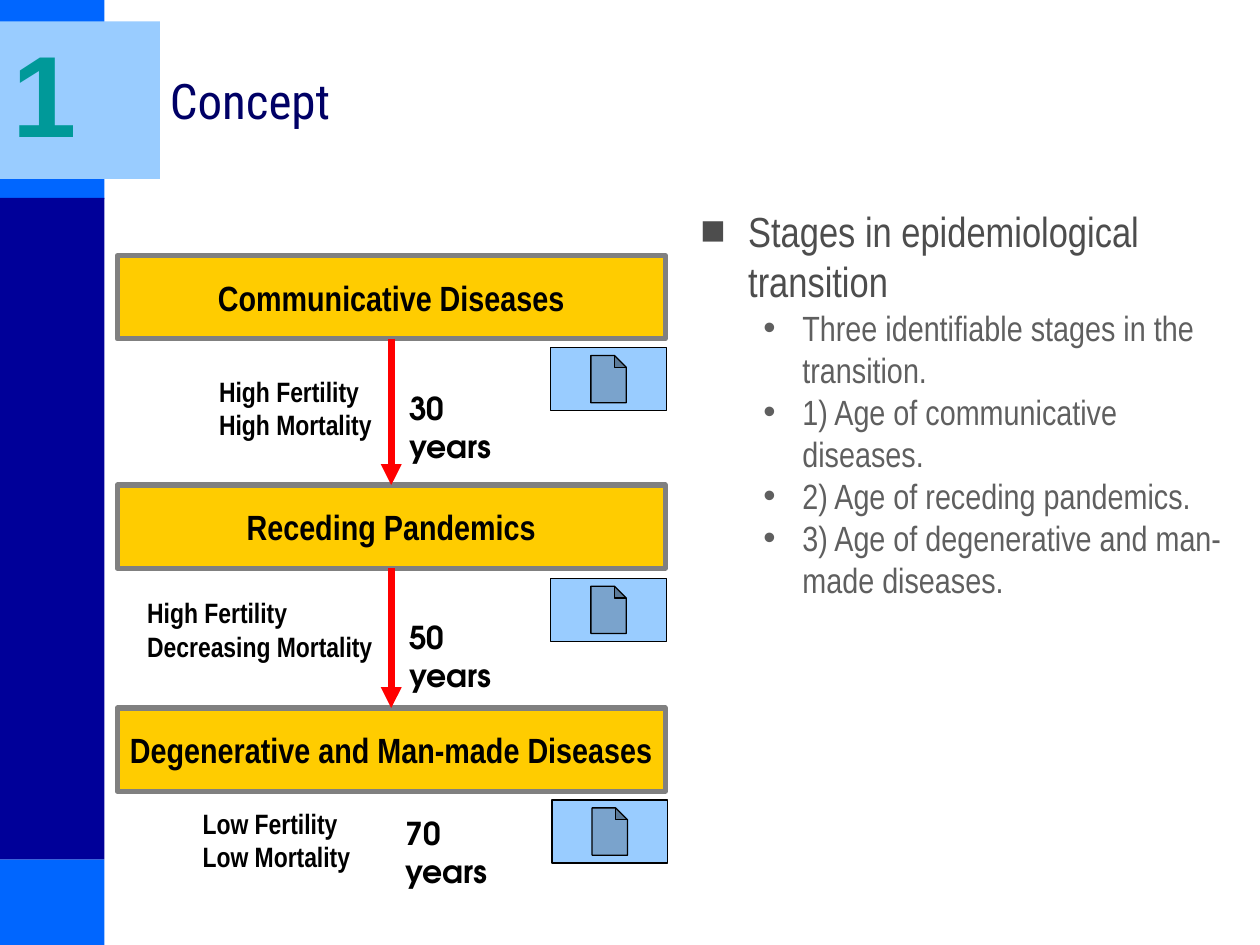
from lxml import etree
from pptx import Presentation, util as u
from pptx.dml.color import RGBColor
from pptx.enum import shapes, text
from pptx.oxml import ns

COLORS = {
    "blue": "0066FF", "navy": "000099", "sky": "99CCFF", "title": "000066",
    "heading": "4D4D4D", "detail": "5F5F5F", "gold": "FFCC00", "gray": "808080",
    "black": "000000", "red": "FF0000", "teal": "009999",
}
NARROW = "Arial Narrow"


def color(name):
    return RGBColor.from_string(COLORS[name])


def add_child(parent, tag, **attributes):
    return etree.SubElement(parent, ns.qn(tag), attributes)


class SlideBuilder:
    """Holds the current slide and the style shared by its elements."""

    def __init__(self, slide):
        self.slide = slide

    def format_run(self, paragraph, size, font, ink, bold=False):
        for run in paragraph.runs:
            run.font.size = u.Pt(size)
            run.font.bold = bold
            run.font.color.rgb = color(ink)
            run.font.name = font

    def shape(self, kind, box, fill, line=None, width=0.75):
        shape = self.slide.shapes.add_shape(kind, *map(u.Inches, box))
        shape.shadow.inherit = False
        shape.fill.solid()
        shape.fill.fore_color.rgb = color(fill)
        if line:
            shape.line.color.rgb = color(line)
            shape.line.width = u.Pt(width)
        else:
            shape.line.fill.background()
        return shape

    def stage(self, top, label):
        shape = self.shape(shapes.MSO_SHAPE.RECTANGLE, (0.93, top, 4.35, 0.66),
                           "gold", "gray", 3)
        frame = shape.text_frame
        frame.word_wrap = False
        frame.vertical_anchor = text.MSO_ANCHOR.MIDDLE
        frame.text = label
        frame.paragraphs[0].alignment = text.PP_ALIGN.CENTER
        self.format_run(frame.paragraphs[0], 20, NARROW, "black", True)
        return shape

    def text(self, box, lines, size, font, ink, bold=False, wrap=True, middle=False):
        frame = self.slide.shapes.add_textbox(*map(u.Inches, box)).text_frame
        frame.word_wrap = wrap
        if middle:
            frame.vertical_anchor = text.MSO_ANCHOR.MIDDLE
        frame.text = "\n".join(lines)
        for paragraph in frame.paragraphs:
            self.format_run(paragraph, size, font, ink, bold)
        return frame

    def bullet(self, paragraph, mark, margin, hanging):
        properties = paragraph._p.get_or_add_pPr()
        properties.set("marL", str(u.Inches(margin)))
        properties.set("indent", str(-u.Inches(hanging)))
        add_child(properties, "a:buFont", typeface="Arial")
        add_child(properties, "a:buChar", char=mark)

    def text_shadow(self, run):
        effects = etree.Element(ns.qn("a:effectLst"))
        shadow = add_child(effects, "a:outerShdw", dist="38100", dir="2700000")
        add_child(shadow, "a:srgbClr", val=COLORS["gray"])
        run.font._element.find(ns.qn("a:solidFill")).addnext(effects)

    def arrow(self, start, end):
        """Joins the bottom of one stage to the top of the next."""
        connector = self.slide.shapes.add_connector(shapes.MSO_CONNECTOR.STRAIGHT, 0, 0, 0, 0)
        connector.begin_connect(start, 2)
        connector.end_connect(end, 0)
        connector.line.color.rgb = color("red")
        connector.line.width = u.Pt(4)
        add_child(connector.line._get_or_add_ln(), "a:tailEnd", type="triangle")
        add_child(connector._element.spPr, "a:effectLst")


def main():
    presentation = Presentation()
    presentation.slide_width = u.Inches(10)
    presentation.slide_height = u.Inches(7.5)
    slide = presentation.slides.add_slide(presentation.slide_layouts[6])
    builder = SlideBuilder(slide)

    bands = [
        ((0, 6.82, 0.83, 0.68), "blue"), ((0, 0, 0.83, 1.58), "blue"),
        ((0, 1.57, 0.83, 5.25), "navy"), ((0, 0.17, 1.27, 1.25), "sky"),
    ]
    for box, fill in bands:
        builder.shape(shapes.MSO_SHAPE.RECTANGLE, box, fill)

    builder.text((1.25, 0.17, 8.58, 1.25), ["Concept"], 28, "Roboto Condensed",
                 "title", middle=True)
    number = builder.text((0, 0.12, 0.92, 1.21), ["1"], 66, "Arial", "teal",
                          bold=True, middle=True)
    builder.text_shadow(number.paragraphs[0].runs[0])

    body = builder.text((5.46, 1.58, 4.38, 5.75), [
        "Stages in epidemiological transition",
        "Three identifiable stages in the transition.",
        "1) Age of communicative diseases.",
        "2) Age of receding pandemics.",
        "3) Age of degenerative and man-made diseases.",
    ], 24, NARROW, "heading")
    heading, *details = body.paragraphs
    builder.bullet(heading, "■", 0.38, 0.38)
    for paragraph in details:
        paragraph.level = 1
        builder.format_run(paragraph, 20, NARROW, "detail")
        builder.bullet(paragraph, "•", 0.81, 0.31)

    # Stage top and label, button place, duration and its place, trends and their box
    stages = [
        (2.03, "Communicative Diseases", (4.37, 2.76), "30 years", (3.15, 3.04),
         ["High Fertility", "High Mortality"], (1.64, 2.92, 1.41, 0.64)),
        (3.85, "Receding Pandemics", (4.37, 4.59), "50 years", (3.15, 4.86),
         ["High Fertility", "Decreasing Mortality"], (1.07, 4.68, 1.99, 0.64)),
        (5.62, "Degenerative and Man-made Diseases", (4.38, 6.35), "70 years", (3.12, 6.41),
         ["Low Fertility", "Low Mortality"], (1.51, 6.35, 1.37, 0.64)),
    ]
    boxes = []
    for top, label, button, years, years_place, trends, trends_box in stages:
        boxes.append(builder.stage(top, label))
        builder.shape(shapes.MSO_SHAPE.ACTION_BUTTON_DOCUMENT, (*button, 0.92, 0.5),
                      "sky", "black")
        builder.text((*years_place, 1.15, 0.4), [years], 18, "TeX Gyre Adventor",
                     "black", bold=True)
        builder.text(trends_box, trends, 16, NARROW, "black", bold=True, wrap=False)
    for start, end in zip(boxes, boxes[1:]):
        builder.arrow(start, end)

    presentation.save("out.pptx")


if __name__ == "__main__":
    main()
